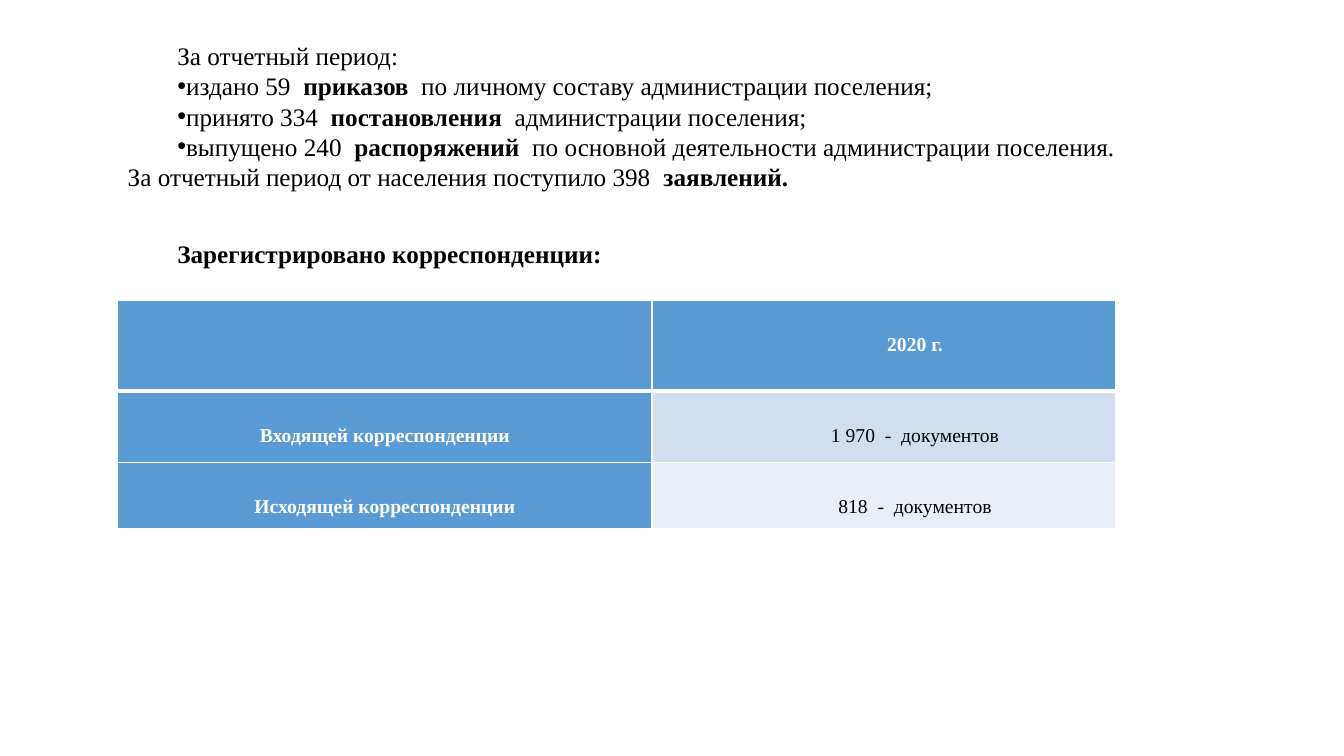
import pptx
import pptx.util
import pptx.dml.color
import pptx.enum.text
import pptx.oxml
import pptx.oxml.ns

Cm = pptx.util.Cm
Pt = pptx.util.Pt
RGBColor = pptx.dml.color.RGBColor
Align = pptx.enum.text.PP_ALIGN
Anchor = pptx.enum.text.MSO_ANCHOR

FONT = "Times New Roman"
BLACK = RGBColor(0, 0, 0)
WHITE = RGBColor(255, 255, 255)
BLUE = RGBColor(0x5B, 0x9B, 0xD5)
LIGHT_BLUE = RGBColor(0xD2, 0xDE, 0xEF)
PALE_BLUE = RGBColor(0xEA, 0xEF, 0xF7)

REPORT = [
    ("indent", [("За отчетный период:", False)]),
    ("bullet", [("издано 59  ", False), ("приказов  ", True),
                ("по личному составу администрации поселения;", False)]),
    ("bullet", [("принято 334  ", False), ("постановления  ", True),
                ("администрации поселения;", False)]),
    ("bullet", [("выпущено 240  ", False), ("распоряжений  ", True),
                ("по основной деятельности администрации поселения.", False)]),
    ("plain", [("За отчетный период от населения поступило 398  ", False),
               ("заявлений.", True)]),
    ("heading", [("Зарегистрировано корреспонденции:", True)]),
]
CORRESPONDENCE = [
    ("", "2020 г."),
    ("Входящей корреспонденции", "1 970  -  документов"),
    ("Исходящей корреспонденции", "818  -  документов"),
]
COLUMN_WIDTHS = [13.46, 11.68]
ROW_HEIGHTS = [2.29, 1.8, 1.65]
VALUE_FILLS = [BLUE, LIGHT_BLUE, PALE_BLUE]


def style_span(span, size, bold, color):
    span.font.name = FONT
    span.font.size = Pt(size)
    span.font.bold = bold
    span.font.color.rgb = color


def add_report(page):
    box = page.shapes.add_textbox(Cm(2.97), Cm(0.86), Cm(28.63), Cm(6.07))
    frame = box.text_frame
    frame.word_wrap = True
    frame.vertical_anchor = Anchor.MIDDLE
    for index, (kind, spans) in enumerate(REPORT):
        para = frame.add_paragraph() if index else frame.paragraphs[0]
        para.alignment = Align.JUSTIFY if index else Align.LEFT
        para.line_spacing = Pt(21.55)
        if kind == "heading":
            para.space_before = Pt(33.4)
        properties = para._p.get_or_add_pPr()
        properties.set("marL", "0")
        properties.set("indent", str(0 if kind == "plain" else Cm(1.25)))
        if kind == "bullet":
            namespace = pptx.oxml.ns.nsdecls("a")
            properties.append(pptx.oxml.parse_xml(f'<a:buFont {namespace} typeface="Arial"/>'))
            properties.append(pptx.oxml.parse_xml(f'<a:buChar {namespace} char="•"/>'))
        for text, bold in spans:
            span = para.add_run()
            span.text = text
            style_span(span, 18, bold, BLACK)


def add_borders(cell, bottom, top):
    properties = cell._tc.get_or_add_tcPr()
    for side, width in (("L", 1), ("R", 1), ("T", top), ("B", bottom)):
        properties.append(pptx.oxml.parse_xml(
            f'<a:ln{side} {pptx.oxml.ns.nsdecls("a")} w="{Pt(width)}">'
            f'<a:solidFill><a:srgbClr val="{WHITE}"/></a:solidFill></a:ln{side}>'))


def add_correspondence(page):
    table = page.shapes.add_table(
        len(CORRESPONDENCE), len(COLUMN_WIDTHS), Cm(2.97), Cm(7.57),
        Cm(sum(COLUMN_WIDTHS)), Cm(sum(ROW_HEIGHTS))).table
    for column, width in zip(table.columns, COLUMN_WIDTHS):
        column.width = Cm(width)
    for row, height in zip(table.rows, ROW_HEIGHTS):
        row.height = Cm(height)
    for row, texts in enumerate(CORRESPONDENCE):
        for column, text in enumerate(texts):
            cell = table.cell(row, column)
            is_header = row == 0 or column == 0
            add_borders(cell, bottom=1 if row else 3, top=3 if row == 1 else 1)
            cell.fill.solid()
            cell.fill.fore_color.rgb = VALUE_FILLS[row] if column else BLUE
            cell.margin_left = Cm(1.6 if column else 0.02)
            cell.margin_right = Cm(0.02)
            cell.margin_top = Cm(0.9 if row else 0)
            cell.margin_bottom = Cm(0)
            cell.vertical_anchor = Anchor.TOP if row else Anchor.MIDDLE
            cell.text_frame.text = text
            para = cell.text_frame.paragraphs[0]
            para.alignment = Align.CENTER
            para.line_spacing = Pt(13.8)
            for span in para.runs:
                style_span(span, 14, is_header, WHITE if is_header else BLACK)


def main():
    deck = pptx.Presentation()
    deck.slide_width = Cm(33.87)
    deck.slide_height = Cm(19.05)
    page = deck.slides.add_slide(deck.slide_layouts[6])
    add_correspondence(page)
    add_report(page)
    deck.save("out.pptx")


if __name__ == "__main__":
    main()
